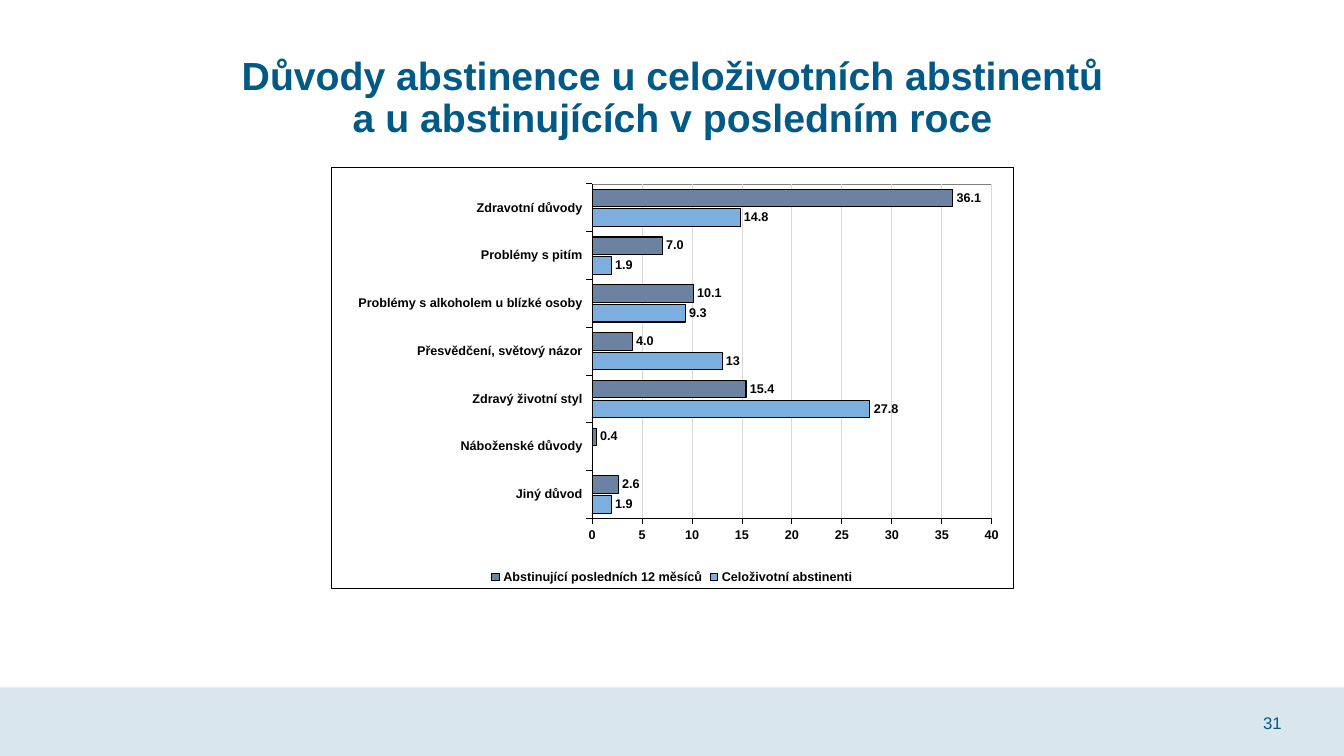
from dataclasses import dataclass
from typing import Any

from lxml import etree
from pptx import Presentation
from pptx import util as u
from pptx.chart import data as chart_data
from pptx.dml.color import RGBColor
from pptx.enum import chart as ch
from pptx.enum import shapes, text
from pptx.oxml import ns

PETROL = RGBColor(0x00, 0x5A, 0x85)
PALE_BLUE = RGBColor(0xD9, 0xE6, 0xEE)
SKY = RGBColor(0x7C, 0xAF, 0xDE)
SLATE = RGBColor(0x6B, 0x82, 0xA1)
GRID = RGBColor(0xD9, 0xD9, 0xD9)
GRAY = RGBColor(0x80, 0x80, 0x80)
BLACK = RGBColor(0, 0, 0)
WHITE = RGBColor(0xFF, 0xFF, 0xFF)


@dataclass
class Label:
    words: str
    box: tuple[float, float, float, float]
    size: int
    bold: bool
    anchor: Any
    align: Any
    line_spacing: float
    side_inset: float


@dataclass
class Group:
    name: str
    values: tuple
    color: RGBColor
    number_format: str


TITLE = Label(
    "Důvody abstinence u celoživotních abstinentů a u abstinujících v\u00a0posledním roce",
    (2.14, 0.51, 9.06, 1.45), 28, True,
    text.MSO_ANCHOR.TOP, text.PP_ALIGN.CENTER, 0.9, 0.15)
PAGE_NUMBER = Label(
    "31", (12.43, 6.97, 0.46, 0.4), 12, False,
    text.MSO_ANCHOR.MIDDLE, text.PP_ALIGN.LEFT, 1.0, 0.1)

REASONS = (
    "Jiný důvod", "Náboženské důvody", "Zdravý životní styl",
    "Přesvědčení, světový názor", "Problémy s\u00a0alkoholem u blízké osoby",
    "Problémy s pitím", "Zdravotní důvody")
GROUPS = (
    Group("Celoživotní abstinenti",
          (1.9, None, 27.8, 13, 9.3, 1.9, 14.8), SKY, "General"),
    Group("Abstinující posledních 12 měsíců",
          (2.6, 0.4, 15.4, 4, 10.1, 7, 36.1), SLATE, "0.0"))
PLOT_LAYOUT = {"layoutTarget": "inner", "xMode": "edge", "yMode": "edge",
               "x": 0.383, "y": 0.039, "w": 0.586, "h": 0.795}


def apply(target: Any, values: dict[str, Any]) -> None:
    for attribute, value in values.items():
        setattr(target, attribute, value)


def set_font(font: Any, size: int, bold: bool, color: RGBColor) -> None:
    apply(font, {"name": "Arial", "size": u.Pt(size), "bold": bold})
    font.color.rgb = color


def set_line(line: Any, color: RGBColor, width: float = 0.75) -> None:
    line.color.rgb = color
    line.width = u.Pt(width)


def add_label(slide: Any, label: Label) -> None:
    frame = slide.shapes.add_textbox(*map(u.Inches, label.box)).text_frame
    inset = u.Inches(label.side_inset)
    apply(frame, {"word_wrap": True, "vertical_anchor": label.anchor,
                  "margin_left": inset, "margin_right": inset})
    paragraph = frame.paragraphs[0]
    apply(paragraph, {"text": label.words, "alignment": label.align,
                      "line_spacing": label.line_spacing})
    set_font(paragraph.font, label.size, label.bold, PETROL)


def add_properties(parent: Any, following: str, color: RGBColor, width: float,
                   fill: RGBColor | None = None) -> None:
    """Give a chart part an outline and fill, placed before the named sibling."""
    paint = (f'<a:solidFill><a:srgbClr val="{fill}"/></a:solidFill>'
             if fill else "<a:noFill/>")
    properties = etree.fromstring(
        f'<c:spPr {ns.nsdecls("c", "a")}>{paint}<a:ln w="{u.Pt(width)}">'
        f'<a:solidFill><a:srgbClr val="{color}"/></a:solidFill></a:ln></c:spPr>')
    sibling = parent.find(ns.qn(following)) if following else None
    if sibling is None:
        parent.append(properties)
    else:
        sibling.addprevious(properties)


def lay_out_plot(plot_area: Any) -> None:
    for old in plot_area.findall(ns.qn("c:layout")):
        plot_area.remove(old)
    layout = etree.Element(ns.qn("c:layout"))
    manual = etree.SubElement(layout, ns.qn("c:manualLayout"))
    for key, value in PLOT_LAYOUT.items():
        etree.SubElement(manual, ns.qn(f"c:{key}")).set("val", str(value))
    plot_area.insert(0, layout)


def add_reasons_chart(slide: Any) -> None:
    reasons = chart_data.CategoryChartData()
    reasons.categories = REASONS
    for group in GROUPS:
        reasons.add_series(group.name, group.values, group.number_format)
    box = map(u.Inches, (3.28, 1.66, 6.77, 4.18))
    chart = slide.shapes.add_chart(
        ch.XL_CHART_TYPE.BAR_CLUSTERED, *box, reasons).chart
    apply(chart, {"has_title": False, "has_legend": True})
    set_font(chart.font, 10, True, BLACK)

    # Legend
    apply(chart.legend, {"position": ch.XL_LEGEND_POSITION.BOTTOM,
                         "include_in_layout": False})
    set_font(chart.legend.font, 9, True, BLACK)

    # Axes
    for axis in (chart.category_axis, chart.value_axis):
        apply(axis, {"major_tick_mark": ch.XL_TICK_MARK.OUTSIDE,
                     "minor_tick_mark": ch.XL_TICK_MARK.NONE})
        set_font(axis.tick_labels.font, 9, True, BLACK)
        set_line(axis.format.line, BLACK)
    apply(chart.value_axis, {"minimum_scale": 0, "maximum_scale": 40,
                             "major_unit": 5, "has_major_gridlines": True})
    apply(chart.value_axis.tick_labels, {"number_format": "0",
                                         "number_format_is_linked": False})
    set_line(chart.value_axis.major_gridlines.format.line, GRID)

    # Bars and their values
    plot = chart.plots[0]
    apply(plot, {"gap_width": 60, "overlap": -13, "vary_by_categories": False})
    for series, group in zip(plot.series, GROUPS):
        series.format.fill.solid()
        series.format.fill.fore_color.rgb = group.color
        set_line(series.format.line, BLACK)
        apply(series.data_labels, {
            "show_value": True, "position": ch.XL_LABEL_POSITION.OUTSIDE_END,
            "number_format": group.number_format,
            "number_format_is_linked": False})
        set_font(series.data_labels.font, 9, True, BLACK)

    # Plot area and frame
    space = chart.element
    plot_area = space.chart.plotArea
    lay_out_plot(plot_area)
    add_properties(plot_area, "", GRAY, 0.75)
    add_properties(space, "c:txPr", BLACK, 0.5, WHITE)


def main() -> None:
    deck = Presentation()
    apply(deck, {"slide_width": u.Inches(13.33), "slide_height": u.Inches(7.5)})
    slide = deck.slides.add_slide(deck.slide_layouts[6])

    # Footer band
    footer = slide.shapes.add_shape(
        shapes.MSO_SHAPE.RECTANGLE, *map(u.Inches, (0, 6.82, 13.33, 0.68)))
    footer.shadow.inherit = False
    footer.fill.solid()
    footer.fill.fore_color.rgb = PALE_BLUE
    footer.line.fill.background()

    for label in (PAGE_NUMBER, TITLE):
        add_label(slide, label)
    add_reasons_chart(slide)
    deck.save("out.pptx")


if __name__ == "__main__":
    main()
